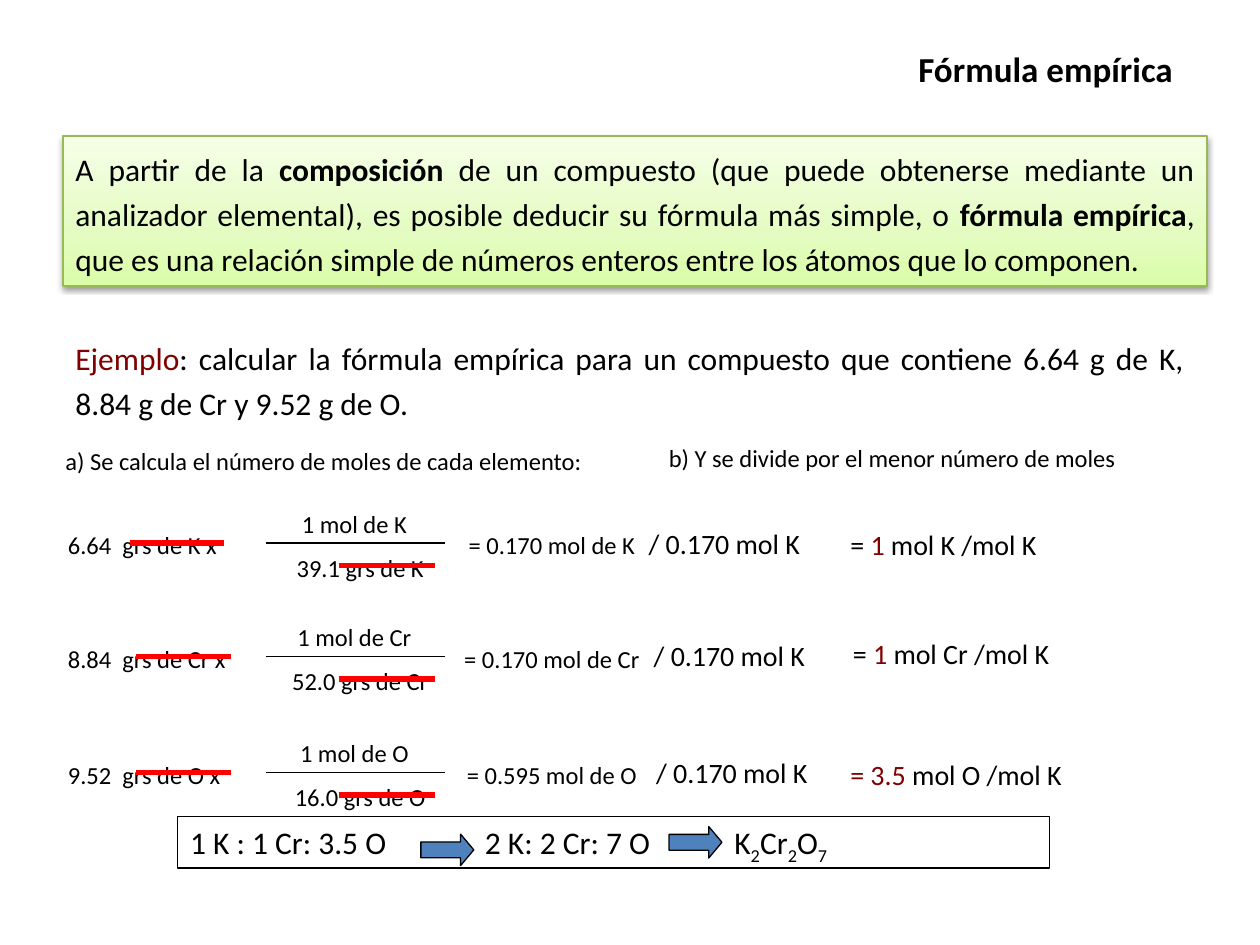
from lxml import etree
from pptx import Presentation
from pptx.dml.color import RGBColor
from pptx.enum.shapes import MSO_CONNECTOR as CONNECTOR, MSO_SHAPE as SHAPE
from pptx.enum.text import MSO_ANCHOR as ANCHOR, PP_ALIGN as ALIGN
from pptx.oxml import parse_xml
from pptx.oxml.ns import nsdecls, qn
from pptx.util import Inches, Pt

BLACK, MAROON, RED, BLUE = "000000", "800000", "FF0000", "4F81BD"


def color(hex_string):
    return RGBColor.from_string(hex_string)


def write(shape, runs, size, align=ALIGN.LEFT, spacing=None):
    """Fill a shape with one paragraph; each run is (text, color, bold, baseline)."""
    frame = shape.text_frame
    frame.word_wrap = True
    frame.vertical_anchor = ANCHOR.TOP
    paragraph = frame.paragraphs[0]
    paragraph.alignment = align
    if spacing:
        paragraph.line_spacing = spacing
    for text, hex_string, bold, baseline in runs:
        run = paragraph.add_run()
        run.text = text
        run.font.name = "Calibri"
        run.font.size = Pt(size)
        run.font.bold = bold
        run.font.color.rgb = color(hex_string)
        if baseline:
            run.font._element.set("baseline", str(baseline))


presentation = Presentation()
presentation.slide_width = Inches(10)
presentation.slide_height = Inches(7.5)
slide = presentation.slides.add_slide(presentation.slide_layouts[5])
shapes = slide.shapes

# Title
title = shapes.title
title.left, title.top = Inches(3.33), Inches(0.33)
title.width, title.height = Inches(6.08), Inches(0.43)
write(title, [("Fórmula empírica", BLACK, True, 0)], 20, ALIGN.RIGHT)

# Definition panel with gradient and soft shadow
panel = shapes.add_shape(SHAPE.RECTANGLE, Inches(0.5), Inches(1.08), Inches(9.08), Inches(1.19))
panel.line.color.rgb = color("98B955")
panel.line.width = Pt(0.75)
panel.fill.solid()
properties = panel._element.spPr
gradient_stops = "".join(
    f'<a:gs pos="{position * 1000}"><a:srgbClr val="{hex_string}"/></a:gs>'
    for position, hex_string in [(0, "DAFDA7"), (35, "E4FCC2"), (100, "F5FFE7")])
properties.replace(properties.find(qn("a:solidFill")), parse_xml(
    f'<a:gradFill {nsdecls("a")} rotWithShape="1"><a:gsLst>{gradient_stops}</a:gsLst>'
    '<a:lin ang="16200000" scaled="0"/></a:gradFill>'))
properties.append(parse_xml(
    f'<a:effectLst {nsdecls("a")}><a:outerShdw blurRad="{Pt(3.1)}" dist="{Pt(1.6)}" '
    'dir="5400000" rotWithShape="0"><a:srgbClr val="000000"><a:alpha val="38000"/>'
    '</a:srgbClr></a:outerShdw></a:effectLst>'))
write(panel, [
    ("A partir de la ", BLACK, False, 0),
    ("composición ", BLACK, True, 0),
    ("de un compuesto (que puede obtenerse mediante un analizador elemental), "
     "es posible deducir su fórmula más simple, o ", BLACK, False, 0),
    ("fórmula empírica", BLACK, True, 0),
    (", que es una relación simple de números enteros entre los átomos "
     "que lo componen.", BLACK, False, 0),
], 18, ALIGN.JUSTIFY, 1.2)

# Example and the headings of its two steps
example = shapes.add_textbox(Inches(0.5), Inches(2.58), Inches(9), Inches(0.82))
write(example, [
    ("Ejemplo", MAROON, False, 0),
    (": calcular la fórmula empírica para un compuesto que contiene 6.64 g de K, "
     "8.84 g de Cr y 9.52 g de O.", BLACK, False, 0),
], 18, ALIGN.JUSTIFY, 1.2)

for left, top, width, text in [
    (0.42, 3.44, 4.79, "a) Se calcula el número de moles de cada elemento:"),
    (5.21, 3.42, 4.16, "b) Y se divide por el menor número de moles"),
]:
    heading = shapes.add_textbox(Inches(left), Inches(top), Inches(width), Inches(0.38))
    write(heading, [(text, BLACK, False, 0)], 14, spacing=1.2)

# One row per element; the last values place the strike, the divisor and the ratio
rows = [
    (4.16, "K", "6.64", "39.1", "0.170", [("= ", BLACK), ("1", MAROON)],
     1.03, (5.05, 4.13), (6.65, 4.14)),
    (5.06, "Cr", "8.84", "52.0", "0.170", [("= ", BLACK), ("1", MAROON)],
     1.08, (5.09, 5.02), (6.67, 5.0)),
    (5.98, "O", "9.52", "16.0", "0.595", [("= 3.5", MAROON)],
     1.08, (5.11, 5.95), (6.65, 5.96)),
]
for top, element, grams, molar_mass, moles, ratio, strike_left, divisor_at, ratio_at in rows:
    ratio_runs = ratio + [(f" mol {element} /mol K", BLACK)]
    for left, text_top, width, height, size, align, runs in [
        (0.44, top, 1.78, 0.33, 14, ALIGN.LEFT, [(f"{grams}  grs de {element} x", BLACK)]),
        (2.17, top - 0.17, 1.33, 0.33, 14, ALIGN.CENTER, [(f"1 mol de {element} ", BLACK)]),
        (2.11, top + 0.18, 1.5, 0.33, 14, ALIGN.CENTER,
         [(f"{molar_mass} grs de {element}", BLACK)]),
        (3.42, top, 1.92, 0.33, 14, ALIGN.CENTER, [(f"= {moles} mol de {element}", BLACK)]),
        (*divisor_at, 1.56, 0.37, 16, ALIGN.LEFT, [("/ 0.170 mol K", BLACK)]),
        (*ratio_at, 2.42, 0.37, 16, ALIGN.LEFT, ratio_runs),
    ]:
        box = shapes.add_textbox(Inches(left), Inches(text_top), Inches(width), Inches(height))
        write(box, [(text, hex_string, False, 0) for text, hex_string in runs], size, align)

    for left, width, line_top, hex_string, weight in [
        (2.11, 1.42, top + 0.15, BLACK, 0.75),
        (strike_left, 0.75, top + 0.15, RED, 3),
        (2.69, 0.76, top + 0.33, RED, 3),
    ]:
        line = shapes.add_connector(CONNECTOR.STRAIGHT, Inches(left), Inches(line_top),
                                    Inches(left + width), Inches(line_top))
        line.line.color.rgb = color(hex_string)
        line.line.width = Pt(weight)
        etree.SubElement(line._element.spPr, qn("a:effectLst"))

# Result box, with tab stops that leave room for the arrows
result = shapes.add_shape(SHAPE.RECTANGLE, Inches(1.41), Inches(6.48), Inches(6.92), Inches(0.41))
result.shadow.inherit = False
result.fill.background()
result.line.color.rgb = color(BLACK)
result.line.width = Pt(0.75)
formula = [("1 K : 1 Cr: 3.5 O\t2 K: 2 Cr: 7 O\tK", 0), ("2", -25000), ("Cr", 0),
           ("2", -25000), ("O", 0), ("7", -25000)]
write(result, [(text, BLACK, False, baseline) for text, baseline in formula], 18)
tab_list = etree.SubElement(result.text_frame.paragraphs[0]._p.get_or_add_pPr(), qn("a:tabLst"))
for position in (2.34, 4.32):
    etree.SubElement(tab_list, qn("a:tab"), pos=str(Inches(position)), algn="l")

for left, top in [(3.34, 6.62), (5.31, 6.56)]:
    arrow = shapes.add_shape(SHAPE.RIGHT_ARROW, Inches(left), Inches(top),
                             Inches(0.42), Inches(0.25))
    arrow.shadow.inherit = False
    arrow.adjustments[1] = 0.42
    arrow.fill.solid()
    arrow.fill.fore_color.rgb = color(BLUE)
    arrow.line.color.rgb = color(BLACK)
    arrow.line.width = Pt(0.75)

presentation.save("out.pptx")
